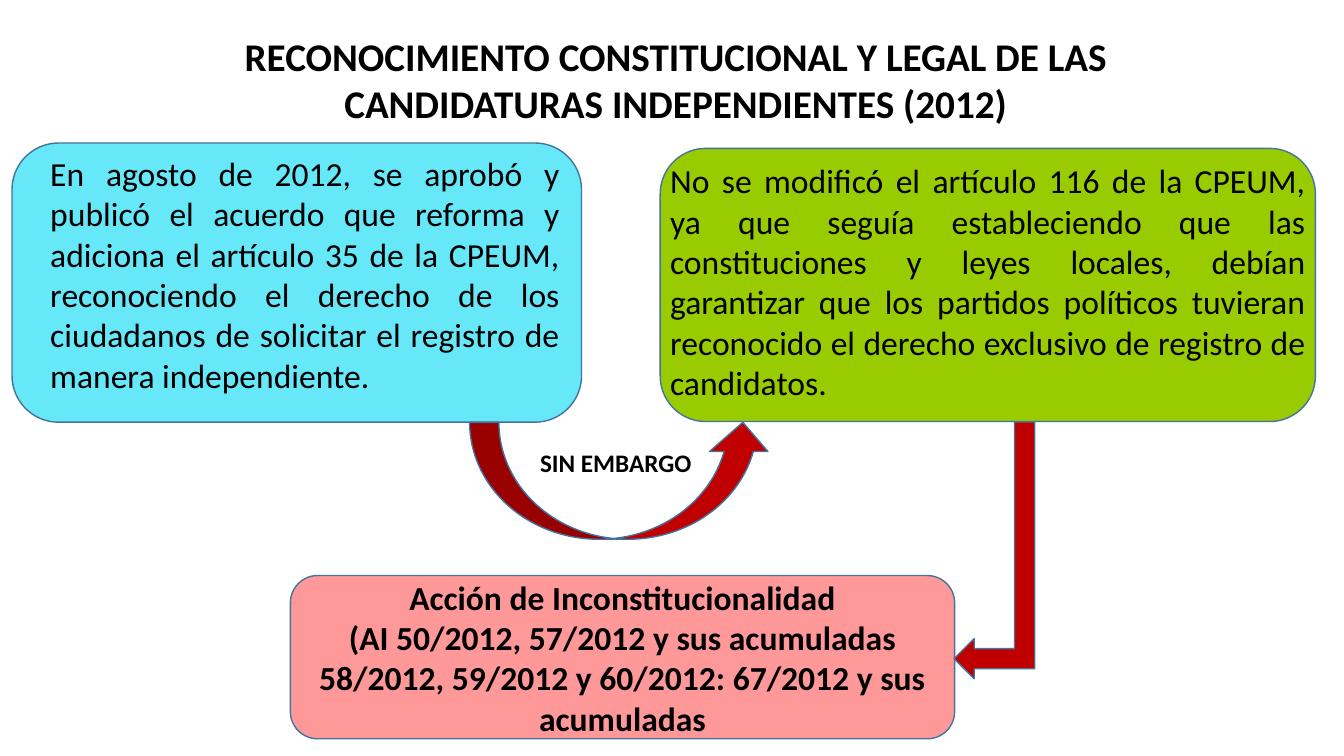
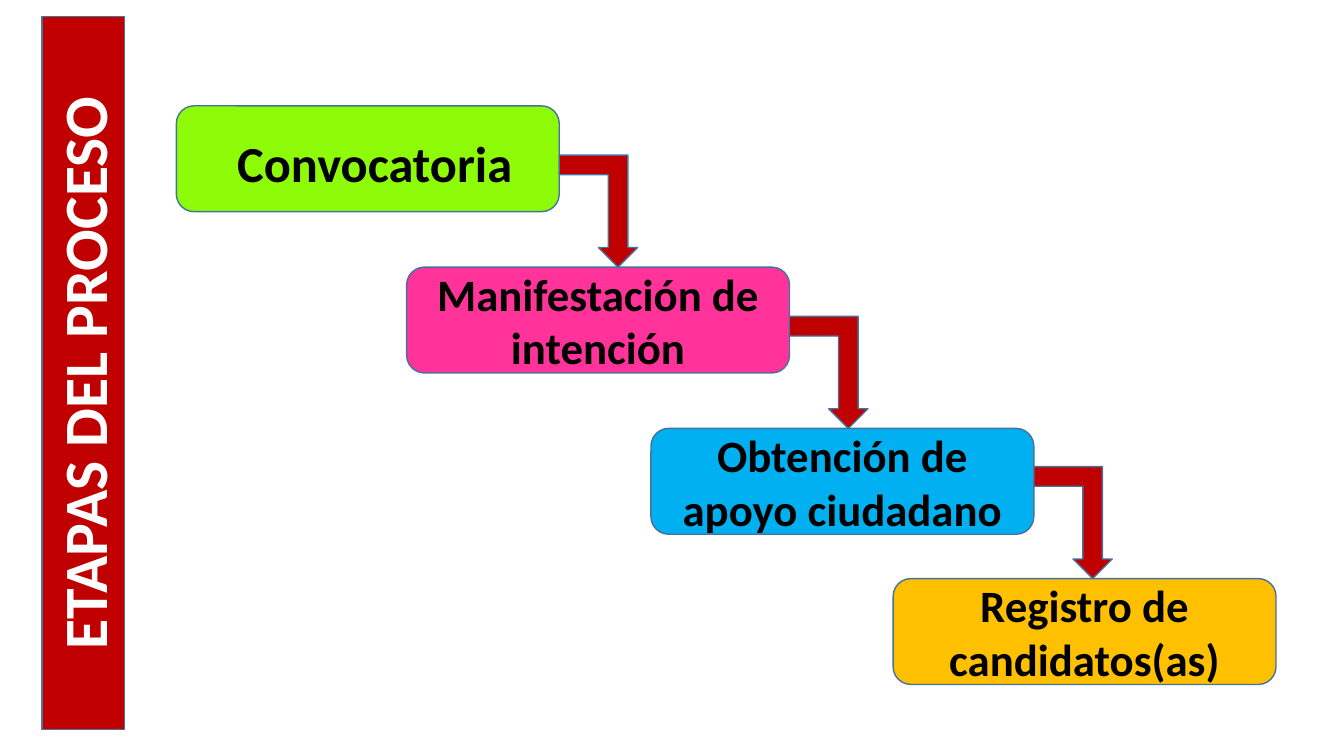
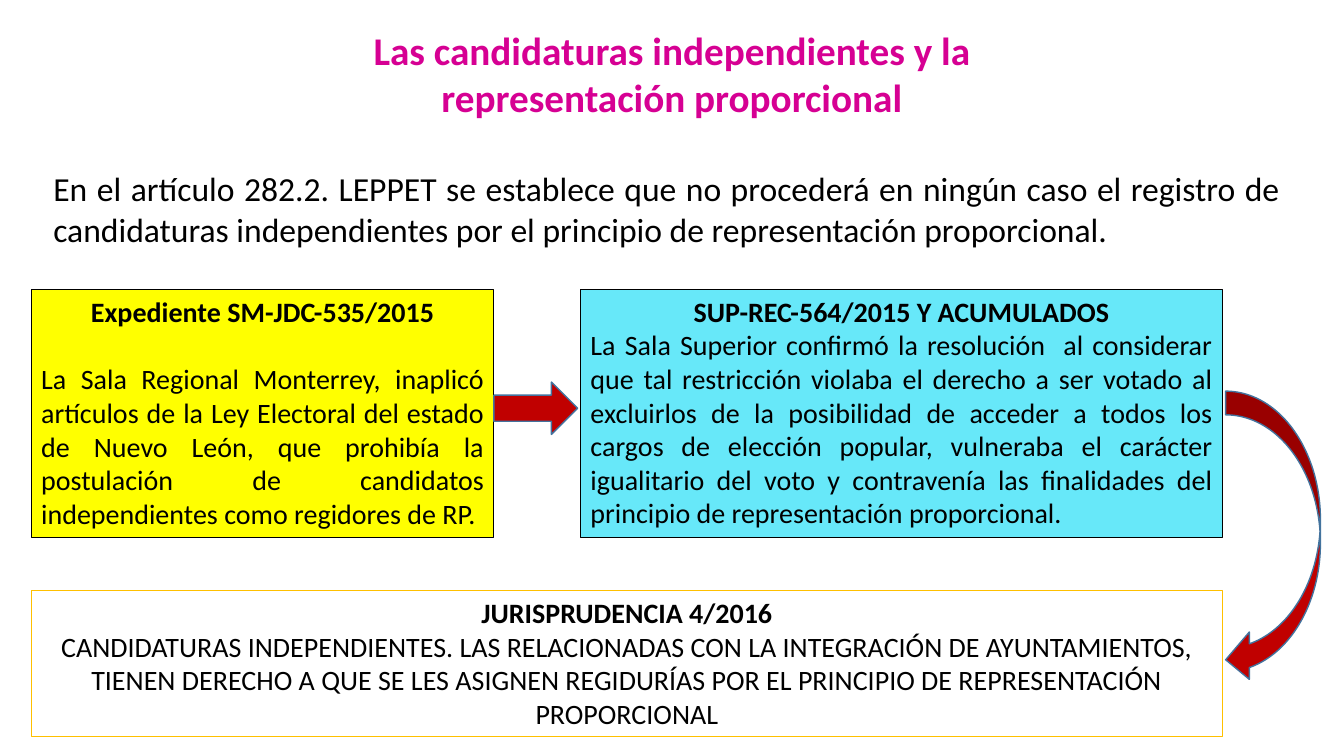
from dataclasses import dataclass

from lxml.etree import SubElement
from pptx import Presentation
from pptx.dml.color import RGBColor
from pptx.enum.shapes import MSO_SHAPE as Preset
from pptx.enum.text import MSO_ANCHOR as Anchor, MSO_AUTO_SIZE as AutoSize, PP_ALIGN as Align
from pptx.oxml.ns import qn
from pptx.util import Pt


@dataclass(frozen=True)
class Theme:
    font: str = "Calibri"
    ink: str = "000000"
    white: str = "FFFFFF"
    red: str = "C00000"
    edge: str = "43739E"
    text_outline: str = "4472C4"
    magenta: str = "D60093"
    cyan: str = "67E8F9"
    olive: str = "99CC00"
    salmon: str = "FF9999"
    lime: str = "8EFC08"
    pink: str = "FF3399"
    blue: str = "00B0F0"
    amber: str = "FFC000"
    yellow: str = "FFFF00"
    band_size: int = 44
    first_step_size: int = 36
    step_size: int = 32
    title_size: int = 28
    body_size: int = 24
    case_size: int = 20
    label_size: int = 18


THEME = Theme()


@dataclass(frozen=True)
class Box:
    left: float
    top: float
    width: float
    height: float

    @property
    def right(self):
        return self.left + self.width

    def inside(self, left, top, width, height):
        """Box whose left and top are measured from this one."""
        return Box(self.left + left, self.top + top, width, height)

    def turned(self):
        """Frame that fills this box after a quarter turn."""
        shift = (self.width - self.height) / 2
        return Box(self.left + shift, self.top - shift, self.height, self.width)

    def lengths(self):
        return [Pt(round(n, 2)) for n in (self.left, self.top, self.width, self.height)]


PAGE = Box(0, 0, 960, 540)


@dataclass(frozen=True)
class Line:
    text: str
    size: int = THEME.body_size
    bold: bool = False
    align: Align = Align.CENTER
    color: str = THEME.ink
    after: float = 0
    outlined: bool = False


# Basic parts

def write(shape, lines, anchor=Anchor.MIDDLE, grow=False):
    frame = shape.text_frame
    frame.word_wrap = True
    frame.vertical_anchor = anchor
    frame.auto_size = AutoSize.SHAPE_TO_FIT_TEXT if grow else AutoSize.NONE
    for index, line in enumerate(lines):
        paragraph = frame.add_paragraph() if index else frame.paragraphs[0]
        paragraph.alignment = line.align
        paragraph.space_after = Pt(line.after)
        run = paragraph.add_run()
        run.text = line.text
        font = run.font
        font.name, font.size, font.bold = THEME.font, Pt(line.size), line.bold
        font.color.rgb = RGBColor.from_string(line.color)
        if line.outlined:
            outline_run(run)


def outline_run(run):
    properties = run.font.fill._xPr
    outline = SubElement(properties, qn("a:ln"), w=str(Pt(0.8)))
    fill = SubElement(outline, qn("a:solidFill"))
    SubElement(fill, qn("a:srgbClr"), val=THEME.text_outline)
    properties.insert(0, outline)


def add_text(slide, box, line):
    shape = slide.shapes.add_textbox(*box.lengths())
    write(shape, [line], Anchor.TOP, grow=True)


def add_block(slide, preset, box, fill, edge=THEME.edge, weight=1):
    shape = slide.shapes.add_shape(preset, *box.lengths())
    shape.shadow.inherit = False
    shape.fill.solid()
    shape.fill.fore_color.rgb = RGBColor.from_string(fill)
    shape.line.color.rgb = RGBColor.from_string(edge)
    shape.line.width = Pt(weight)
    return shape


def add_bent_arrow(slide, box, rotation):
    frame = box.turned() if rotation == 270 else box
    arrow = add_block(slide, Preset.BENT_UP_ARROW, frame, THEME.red)
    arrow.rotation = rotation
    arrow.element.spPr.get_or_add_xfrm().set("flipH", "1")


def add_title(slide, box, text, color=THEME.ink):
    add_text(slide, box, Line(text, THEME.title_size, True, color=color))


# Regions

def add_card(slide, box, fill, text, left, top, width):
    add_block(slide, Preset.ROUNDED_RECTANGLE, box, fill)
    add_text(slide, box.inside(left, top, width, 181.4), Line(text, align=Align.JUSTIFY))


def add_however(slide, box):
    add_block(slide, Preset.CURVED_UP_ARROW, box, THEME.red)
    add_text(slide, box.inside(43.2, 14.4, 129.6, 28.8),
             Line("SIN EMBARGO", THEME.label_size, True, Align.LEFT))


def add_band(slide, box, text):
    band = add_block(slide, Preset.RECTANGLE, box.turned(), THEME.red)
    band.rotation = 270
    write(band, [Line(text, THEME.band_size, True, color=THEME.white)])


def add_staircase(slide, box, steps):
    step_boxes = [box.inside(left, top, 273.5, 75.6) for left, top, *_ in steps]
    for step_box, (_, _, text, fill, size) in zip(step_boxes, steps):
        step = add_block(slide, Preset.ROUNDED_RECTANGLE, step_box, fill)
        write(step, [Line(text, size, True, outlined=True)])
        if size == THEME.first_step_size:
            step.text_frame.margin_left, step.text_frame.margin_top = Pt(17), Pt(9)
    # Each arrow drops from one step onto the next
    for upper, lower in zip(step_boxes, step_boxes[1:]):
        add_bent_arrow(slide, Box(upper.right, lower.top - 80, 56, 80), 180)


def add_case(slide, box, fill, heading, body, edge=THEME.ink, weight=0.75,
             align=Align.JUSTIFY, gap=0):
    case = add_block(slide, Preset.RECTANGLE, box, fill, edge, weight)
    write(case, [Line(heading, THEME.case_size, True, after=gap),
                 Line(body, THEME.case_size, align=align)], Anchor.TOP, grow=True)


# Slides

def build_recognition(slide, page):
    add_title(slide, page.inside(98.6, 19.4, 768, 75),
              "RECONOCIMIENTO CONSTITUCIONAL Y LEGAL DE LAS "
              "CANDIDATURAS INDEPENDIENTES (2012)")
    add_card(slide, page.inside(8.6, 102.2, 406.8, 199.4), THEME.cyan,
             "En agosto de 2012, se aprobó y publicó el acuerdo que reforma y adiciona "
             "el artículo 35 de la CPEUM, reconociendo el derecho de los ciudadanos de "
             "solicitar el registro de manera independiente.", 20.2, 3.6, 378)
    add_however(slide, page.inside(335.5, 301.7, 216, 83.5))
    add_card(slide, page.inside(471.6, 106, 468, 195.1), THEME.olive,
             "No se modificó el artículo 116 de la CPEUM, ya que seguía estableciendo "
             "que las constituciones y leyes locales, debían garantizar que los partidos "
             "políticos tuvieran reconocido el derecho exclusivo de registro de "
             "candidatos.", 0, 5, 468)
    # Constitutional challenge
    challenge = add_block(slide, Preset.ROUNDED_RECTANGLE,
                          page.inside(207.4, 411.1, 474.5, 116.6), THEME.salmon)
    write(challenge, [
        Line("Acción de Inconstitucionalidad", bold=True),
        Line("(AI 50/2012, 57/2012 y sus acumuladas 58/2012, 59/2012 y 60/2012: "
             "67/2012 y sus acumuladas", bold=True)])
    add_bent_arrow(slide, page.inside(681.5, 301.3, 57.6, 183.6), 270)


def build_stages(slide, page):
    add_band(slide, page.inside(29.9, 11.9, 59, 509), "ETAPAS DEL PROCESO")
    add_staircase(slide, page.inside(126, 75.6, 785, 413), [
        (0, 0, "Convocatoria", THEME.lime, THEME.first_step_size),
        (164.5, 115.2, "Manifestación de intención", THEME.pink, THEME.step_size),
        (339, 230.4, "Obtención de apoyo ciudadano", THEME.blue, THEME.step_size),
        (512, 337.7, "Registro de candidatos(as)", THEME.amber, THEME.step_size)])


def build_representation(slide, page):
    add_title(slide, page.inside(192.2, 15.1, 575.3, 75),
              "Las candidaturas independientes y la representación proporcional",
              THEME.magenta)
    add_text(slide, page.inside(31, 116.6, 890.6, 65.5),
             Line("En el artículo 282.2. LEPPET se establece que no procederá en ningún "
                  "caso el registro de candidaturas independientes por el principio de "
                  "representación proporcional.", align=Align.JUSTIFY))
    # Rulings and the resulting case law
    add_case(slide, page.inside(22.3, 206.6, 330.5, 177.1), THEME.yellow,
             "Expediente SM-JDC-535/2015",
             "La Sala Regional Monterrey, inaplicó artículos de la Ley Electoral del "
             "estado de Nuevo León, que prohibía la postulación de candidatos "
             "independientes como regidores de RP.", gap=24.4)
    add_case(slide, page.inside(22.3, 421.9, 851, 104.4), THEME.white,
             "JURISPRUDENCIA 4/2016",
             "CANDIDATURAS INDEPENDIENTES. LAS RELACIONADAS CON LA INTEGRACIÓN DE "
             "AYUNTAMIENTOS, TIENEN DERECHO A QUE SE LES ASIGNEN REGIDURÍAS POR EL "
             "PRINCIPIO DE REPRESENTACIÓN PROPORCIONAL",
             THEME.amber, 1, Align.CENTER)
    add_case(slide, page.inside(414.7, 206.6, 458.6, 177.1), THEME.cyan,
             "SUP-REC-564/2015 Y ACUMULADOS",
             "La Sala Superior confirmó la resolución  al considerar que tal restricción "
             "violaba el derecho a ser votado al excluirlos de la posibilidad de acceder "
             "a todos los cargos de elección popular, vulneraba el carácter igualitario "
             "del voto y contravenía las finalidades del principio de representación "
             "proporcional.")
    add_block(slide, Preset.RIGHT_ARROW, page.inside(352.8, 272.9, 59.8, 37.4), THEME.red)
    add_block(slide, Preset.CURVED_LEFT_ARROW, page.inside(875.5, 279.4, 67.7, 208.8),
              THEME.red)


def main():
    presentation = Presentation()
    presentation.slide_width, presentation.slide_height = Pt(PAGE.width), Pt(PAGE.height)
    blank = presentation.slide_layouts[6]
    for build in (build_recognition, build_stages, build_representation):
        build(presentation.slides.add_slide(blank), PAGE)
    presentation.save("out.pptx")


if __name__ == "__main__":
    main()
